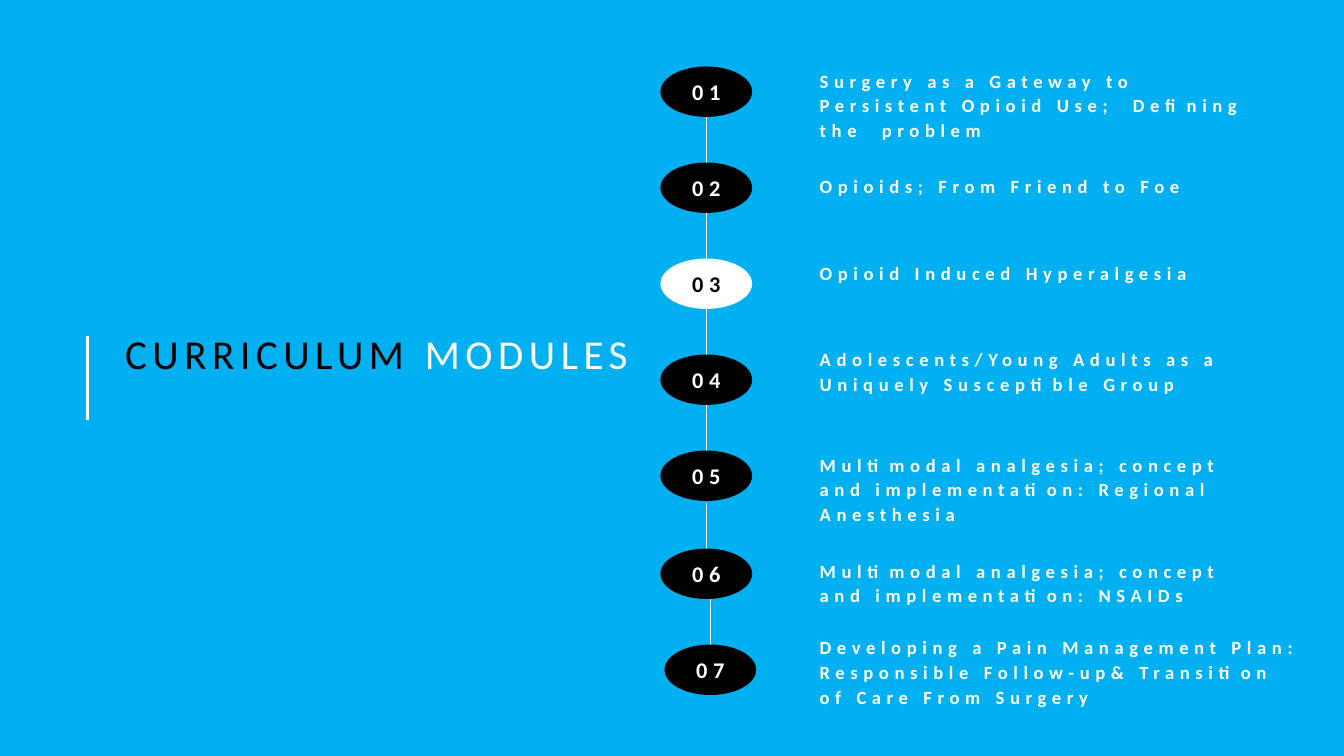
import pptx
import pptx.dml.color
import pptx.enum.shapes
import pptx.enum.text
import pptx.util
from lxml import etree

FONT = "Calibri"
BLUE, BLACK, WHITE = "00B0F0", "000000", "FFFFFF"
TITLE = [("CURRICULUM ", BLACK), ("MODULES", WHITE)]
# description, its top and its width in inches
MODULES = [
    ("Surgery as a Gateway to Persistent Opioid Use;  Defining the  problem", 0.67, 4.34),
    ("Opioids; From Friend to Foe", 1.71, 4.34),
    ("Opioid Induced Hyperalgesia", 2.58, 4.34),
    ("Adolescents/Young Adults as a Uniquely Susceptible Group", 3.43, 4.59),
    ("Multimodal analgesia; concept and implementation: Regional Anesthesia", 4.48, 4.34),
    ("Multimodal analgesia; concept and implementation: NSAIDs", 5.53, 4.34),
    ("Developing a Pain Management Plan: Responsible Follow-up& Transition of Care From Surgery",
     6.29, 4.84),
]
HIGHLIGHTED = 3
OVAL_LEFT, OVAL_TOP, OVAL_WIDTH, OVAL_HEIGHT = 6.55, 0.66, 0.91, 0.5
PITCH, LINK = 0.9525, 0.45
LATE_DROP, LAST_SHIFT = 0.02, 0.04  # modules 6 and 7 sit lower, module 7 also to the right
TEXT_LEFT = 8.13


def inches(*lengths):
    return [pptx.util.Inches(length) for length in lengths]


def rgb(value):
    return pptx.dml.color.RGBColor.from_string(value)


def prepare(frame, anchor):
    """Wrap the text and remove the margins of a text frame."""
    frame.word_wrap = True
    frame.auto_size = pptx.enum.text.MSO_AUTO_SIZE.NONE
    frame.vertical_anchor = anchor
    frame.margin_left = frame.margin_right = frame.margin_top = frame.margin_bottom = 0
    return frame.paragraphs[0]


def add_span(para, text, size, color, bold):
    """Add text with letters spaced 4 points apart."""
    para.font.size, para.font.name, para.font.bold = pptx.util.Pt(size), FONT, bold
    span = para.add_run()
    span.text = text
    span.font.color.rgb = rgb(color)
    span.font._element.set("spc", "400")


def add_line(page, x, top, bottom, width):
    line = page.shapes.add_connector(
        pptx.enum.shapes.MSO_CONNECTOR.STRAIGHT, *inches(x, top, x, bottom))
    line.line.color.rgb = rgb(WHITE)
    line.line.width = pptx.util.Pt(width)
    etree.SubElement(line._element.spPr, pptx.oxml.ns.qn("a:effectLst"))


def add_title(page):
    title = page.shapes.title
    title.left, title.top, title.width, title.height = inches(1.24, 3.26, 5.28, 0.99)
    para = prepare(title.text_frame, pptx.enum.text.MSO_ANCHOR.TOP)
    para.alignment = pptx.enum.text.PP_ALIGN.LEFT
    for text, color in TITLE:
        add_span(para, text, 29.3, color, False)
    add_line(page, 0.87, 3.33, 4.17, 2.25)


def add_module(page, number, text, text_top, text_width):
    left = OVAL_LEFT + (LAST_SHIFT if number == len(MODULES) else 0)
    top = OVAL_TOP + PITCH * (number - 1) + (LATE_DROP if number > 5 else 0)
    fill, ink = (WHITE, BLACK) if number == HIGHLIGHTED else (BLACK, WHITE)
    if number > 1:
        add_line(page, left + OVAL_WIDTH / 2, top - LINK, top, 1)

    oval = page.shapes.add_shape(
        pptx.enum.shapes.MSO_SHAPE.OVAL, *inches(left, top, OVAL_WIDTH, OVAL_HEIGHT))
    oval.shadow.inherit = False
    oval.fill.solid()
    oval.fill.fore_color.rgb = rgb(fill)
    oval.line.fill.background()
    para = prepare(oval.text_frame, pptx.enum.text.MSO_ANCHOR.MIDDLE)
    para.alignment = pptx.enum.text.PP_ALIGN.CENTER
    add_span(para, f"{number:02}", 16, ink, True)

    lines = 1 + len(text) // 30
    box = page.shapes.add_textbox(*inches(TEXT_LEFT, text_top, text_width, 0.24 * lines))
    para = prepare(box.text_frame, pptx.enum.text.MSO_ANCHOR.TOP)
    para.line_spacing = 1.1
    add_span(para, text, 13.3, WHITE, True)


def main():
    deck = pptx.Presentation()
    deck.slide_width, deck.slide_height = inches(13.33, 7.5)
    page = deck.slides.add_slide(deck.slide_layouts.get_by_name("Title Only"))
    page.background.fill.solid()
    page.background.fill.fore_color.rgb = rgb(BLUE)
    add_title(page)
    for number, module in enumerate(MODULES, 1):
        add_module(page, number, *module)
    deck.save("out.pptx")


if __name__ == "__main__":
    main()
